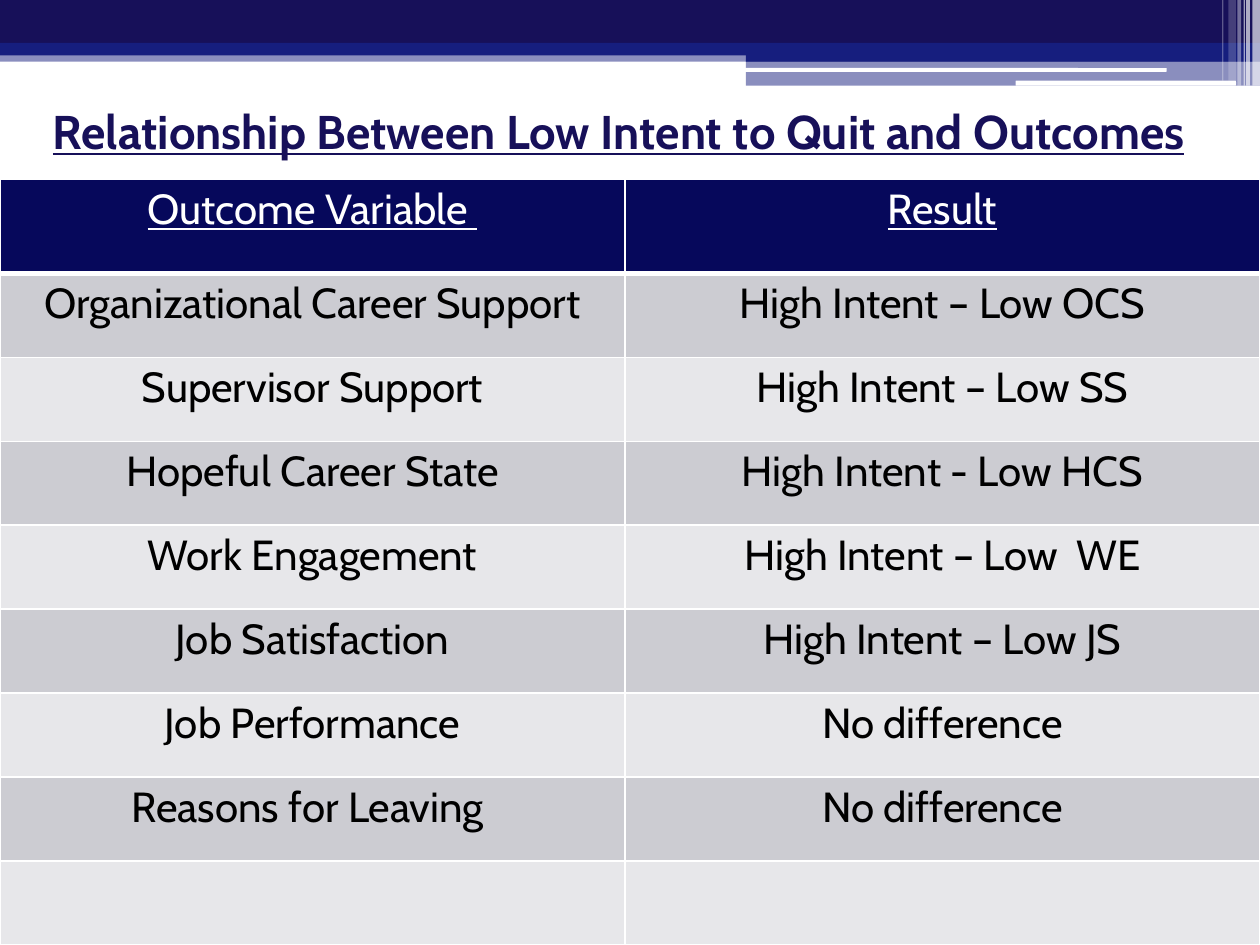
from dataclasses import dataclass

from lxml.etree import SubElement
from pptx import Presentation
from pptx.dml.color import RGBColor
from pptx.enum.shapes import MSO_SHAPE as SHAPE
from pptx.enum.text import MSO_ANCHOR as ANCHOR, PP_ALIGN as ALIGN
from pptx.oxml.ns import qn
from pptx.util import Inches, Pt


@dataclass(frozen=True)
class Theme:
    font: str = "Cabin"
    title_size: int = 27
    table_size: int = 24
    navy: str = "171059"
    blue: str = "161E7E"
    white: str = "FFFFFF"
    black: str = "000000"
    header: str = "06085B"
    bands: tuple = ("CCCCD2", "E7E7EA")


THEME = Theme()
WIDTH, HEIGHT = 10, 7.5
TABLE_TOP, HEADER_HEIGHT = 1.42, 0.75
COLUMN_SHARES = (0.496, 0.504)

ROWS = [
    ("Outcome Variable ", "Result"),
    ("Organizational Career Support", "High Intent – Low OCS"),
    ("Supervisor Support", "High Intent – Low SS"),
    ("Hopeful Career State", "High Intent - Low HCS"),
    ("Work Engagement", "High Intent – Low  WE"),
    ("Job Satisfaction", "High Intent – Low JS"),
    ("Job Performance", "No difference"),
    ("Reasons for Leaving ", "No difference"),
    ("", ""),
]

# Header bars: left, top, width, height, colour, opacity in percent
BARS = [
    (0, 0.4, WIDTH, 0.09, THEME.blue, 50),
    (0, 0, WIDTH, 0.34, THEME.navy, 100),
    (0, 0.34, WIDTH, 0.1, THEME.blue, 100),
    (5.92, 0.39, 4.08, 0.1, THEME.blue, 100),
    (5.92, 0.48, 4.08, 0.2, THEME.blue, 50),
]
# Thin rounded lines: left, top, width, height
LINES = [(5.91, 0.54, 3.35, 0.03), (8.06, 0.64, 1.75, 0.04)]
# Upright stripes at the right edge: left, width, height, opacity
STRIPES = [
    (9.94, 0.06, 0.68, 65),
    (9.89, 0.03, 0.68, 65),
    (9.87, 0.01, 0.68, 60),
    (9.82, 0.03, 0.68, 40),
    (9.75, 0.06, 0.64, 20),
    (9.7, 0.01, 0.64, 30),
]


def rgb(color):
    return RGBColor.from_string(color)


def add_bar(s, left, top, width, height, color, opacity=100, kind=SHAPE.RECTANGLE):
    sp = s.shapes.add_shape(kind, *map(Inches, (left, top, width, height)))
    sp.shadow.inherit = False
    sp.line.fill.background()
    sp.fill.solid()
    sp.fill.fore_color.rgb = rgb(color)
    if opacity < 100:
        clr = sp.fill._xPr.find(".//" + qn("a:srgbClr"))
        SubElement(clr, qn("a:alpha"), val=str(opacity * 1000))
    return sp


def add_header(s):
    for bar in BARS:
        add_bar(s, *bar)
    for line in LINES:
        add_bar(s, *line, THEME.white, kind=SHAPE.ROUNDED_RECTANGLE)
    for left, width, height, opacity in STRIPES:
        add_bar(s, left, 0, width, height, THEME.white, opacity)


def style_text(p, size, color, align, bold=False, underline=False):
    p.alignment = align
    f = p.font
    f.name, f.size, f.bold, f.underline = THEME.font, Pt(size), bold, underline
    f.color.rgb = rgb(color)


def set_title(s, text):
    sp = s.shapes.title
    sp.left, sp.top, sp.width, sp.height = map(Inches, (0.32, 0.65, 9.29, 0.77))
    tf = sp.text_frame
    tf.text, tf.word_wrap, tf.vertical_anchor = text, True, ANCHOR.MIDDLE
    style_text(tf.paragraphs[0], THEME.title_size, THEME.navy, ALIGN.LEFT,
               bold=True, underline=True)


def set_borders(cell, top, bottom):
    tc_pr = cell._tc.get_or_add_tcPr()
    for i, (side, width) in enumerate(zip("LRTB", (1, 1, top, bottom))):
        ln = SubElement(tc_pr, qn("a:ln" + side), w=str(Pt(width)))
        fill = SubElement(ln, qn("a:solidFill"))
        SubElement(fill, qn("a:srgbClr"), val=THEME.white)
        tc_pr.remove(ln)
        tc_pr.insert(i, ln)  # borders come before the fill


def style_cell(cell, text, row):
    is_header = row == 0
    cell.fill.solid()
    cell.fill.fore_color.rgb = rgb(
        THEME.header if is_header else THEME.bands[(row - 1) % 2])
    set_borders(cell, top=3 if row == 1 else 1, bottom=3 if is_header else 1)
    cell.margin_left = cell.margin_right = Inches(0.07)
    cell.margin_top = cell.margin_bottom = Inches(0.04)
    cell.text = text
    style_text(cell.text_frame.paragraphs[0], THEME.table_size,
               THEME.white if is_header else THEME.black, ALIGN.CENTER,
               underline=is_header)


def add_outcome_table(s):
    height = HEIGHT - TABLE_TOP
    table = s.shapes.add_table(
        len(ROWS), len(COLUMN_SHARES),
        *map(Inches, (0, TABLE_TOP, WIDTH, height))).table
    for column, share in zip(table.columns, COLUMN_SHARES):
        column.width = Inches(WIDTH * share)
    body_height = (height - HEADER_HEIGHT) / (len(ROWS) - 1)
    for i, (row, texts) in enumerate(zip(table.rows, ROWS)):
        row.height = Inches(body_height if i else HEADER_HEIGHT)
        for cell, text in zip(row.cells, texts):
            style_cell(cell, text, i)


def main():
    prs = Presentation()
    prs.slide_width, prs.slide_height = Inches(WIDTH), Inches(HEIGHT)
    s = prs.slides.add_slide(prs.slide_layouts[5])  # title only
    add_header(s)
    set_title(s, "Relationship Between Low Intent to Quit and Outcomes")
    add_outcome_table(s)
    prs.save("out.pptx")


if __name__ == "__main__":
    main()
